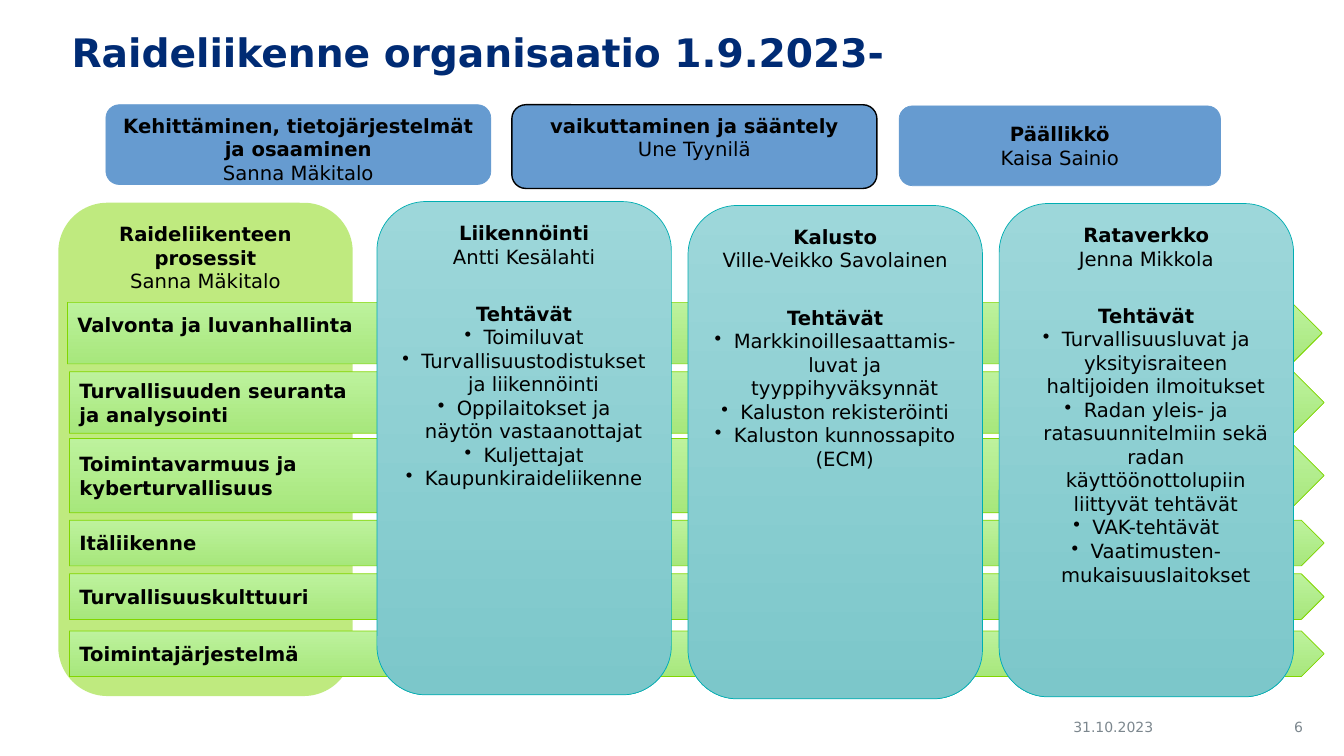
from lxml.etree import SubElement
from pptx import Presentation
from pptx.dml.color import RGBColor
from pptx.enum.shapes import MSO_SHAPE as Shape
from pptx.enum.text import MSO_ANCHOR as Anchor, PP_ALIGN as Align
from pptx.oxml.ns import qn
from pptx.util import Cm, Pt

BLACK = RGBColor(0x00, 0x00, 0x00)
NAVY = RGBColor(0x00, 0x2B, 0x74)
GREY = RGBColor(0x7C, 0x87, 0x8E)
BLUE = RGBColor(0x66, 0x9B, 0xD0)
GREEN = RGBColor(0x81, 0xD6, 0x00)
LIME_TOP = RGBColor(0xBD, 0xF2, 0x9D)
LIME_BOTTOM = RGBColor(0xA7, 0xE7, 0x7C)
TEAL = RGBColor(0x00, 0xAE, 0xB2)
TEAL_TOP = RGBColor(0x9D, 0xD7, 0xDA)
TEAL_BOTTOM = RGBColor(0x7C, 0xC7, 0xCA)

# left, top, width, height, heading, person, anchor, outline colour, outline width
LEADERS = [
    (2.67, 2.64, 9.7, 2.01, "Kehittäminen, tietojärjestelmät ja osaaminen",
     "Sanna Mäkitalo", Anchor.TOP, BLUE, 0.5),
    (12.9, 2.64, 9.2, 2.11, "vaikuttaminen ja sääntely",
     "Une Tyynilä", Anchor.TOP, BLACK, 1),
    (22.66, 2.67, 8.1, 2.01, "Päällikkö",
     "Kaisa Sainio", Anchor.MIDDLE, BLUE, 0.5),
]
# left, top, height, label
PROCESSES = [
    (1.7, 7.62, 1.55, "Valvonta ja luvanhallinta"),
    (1.75, 9.37, 1.55, "Turvallisuuden seuranta\vja analysointi"),
    (1.75, 11.05, 1.87, "Toimintavarmuus ja\vkyberturvallisuus"),
    (1.75, 13.11, 1.15, "Itäliikenne"),
    (1.75, 14.46, 1.15, "Turvallisuuskulttuuri"),
    (1.75, 15.9, 1.15, "Toimintajärjestelmä"),
]
# top, unit, person, tasks
UNITS = [
    (5.08, "Liikennöinti", "Antti Kesälahti", [
        "Toimiluvat",
        "Turvallisuustodistukset ja liikennöinti",
        "Oppilaitokset ja näytön vastaanottajat",
        "Kuljettajat",
        "Kaupunkiraideliikenne"]),
    (5.18, "Kalusto", "Ville-Veikko Savolainen", [
        "Markkinoillesaattamis-luvat ja tyyppihyväksynnät",
        "Kaluston rekisteröinti",
        "Kaluston kunnossapito (ECM)"]),
    (5.13, "Rataverkko", "Jenna Mikkola", [
        "Turvallisuusluvat ja yksityisraiteen haltijoiden ilmoitukset",
        "Radan yleis- ja ratasuunnitelmiin sekä radan "
        "käyttöönottolupiin liittyvät tehtävät",
        "VAK-tehtävät",
        "Vaatimusten-mukaisuuslaitokset"]),
]
UNIT_LEFT, UNIT_STEP = 9.5, 7.84
COLUMN_WIDTH, COLUMN_HEIGHT = 7.42, 12.43
ARROW_WIDTH = 31.62


def write(frame, text, *, size=14, color=BLACK, bold=False, align=Align.CENTER,
          before=0, bullet=False):
    """Add one paragraph, reusing the frame's first one while it is empty."""
    para = frame.paragraphs[0]
    if para.text:
        para = frame.add_paragraph()
    para.alignment = align
    if before:
        para.space_before = Pt(before)
    if bullet:
        props = para._p.get_or_add_pPr()
        props.set("marL", str(Cm(0.48)))
        props.set("indent", str(-Cm(0.48)))
        SubElement(props, qn("a:buChar")).set("char", "•")
    for number, line in enumerate(text.split("\v")):
        if number:
            para.add_line_break()
        span = para.add_run()
        span.text = line
        span.font.name = "DejaVu Sans"
        span.font.size = Pt(size)
        span.font.bold = bold
        span.font.color.rgb = color
    return para


class OrganisationSlide:
    def __init__(self, deck):
        self.slide = deck.slides.add_slide(deck.slide_layouts[5])

    def title(self, text):
        box = self.slide.shapes.title
        box.left, box.top, box.width, box.height = Cm(1.55), Cm(0.71), Cm(29.85), Cm(1.55)
        box.text_frame.vertical_anchor = Anchor.TOP
        para = write(box.text_frame, text, size=28, color=NAVY, bold=True, align=Align.LEFT)
        para.line_spacing = 0.9

    def footer(self, left, width, text, align):
        box = self.slide.shapes.add_textbox(Cm(left), Cm(17.96), Cm(width), Cm(0.71))
        box.text_frame.word_wrap = True
        box.text_frame.vertical_anchor = Anchor.MIDDLE
        write(box.text_frame, text, size=10, color=GREY, align=align)

    def shape(self, kind, left, top, width, height, *, colors, line=None,
              line_width=0.5, anchor=Anchor.TOP):
        """Add a shape filled with one colour, or with a gradient from top to bottom."""
        box = self.slide.shapes.add_shape(kind, Cm(left), Cm(top), Cm(width), Cm(height))
        box.shadow.inherit = False
        if len(colors) == 1:
            box.fill.solid()
            box.fill.fore_color.rgb = colors[0]
        else:
            box.fill.gradient()
            box.fill.gradient_angle = 270
            for stop, color, position in zip(box.fill.gradient_stops, colors, (0, 1)):
                stop.color.rgb = color
                stop.position = position
        if line is None:
            box.line.fill.background()
        else:
            box.line.color.rgb = line
            box.line.width = Pt(line_width)
        box.text_frame.word_wrap = True
        box.text_frame.vertical_anchor = anchor
        return box

    def process_column(self, heading, person):
        box = self.shape(Shape.ROUNDED_RECTANGLE, 1.47, 5.11, COLUMN_WIDTH, COLUMN_HEIGHT,
                         colors=[GREEN])
        color = box._element.spPr.find(qn("a:solidFill"))[0]
        SubElement(color, qn("a:alpha")).set("val", "50000")
        write(box.text_frame, heading, bold=True)
        write(box.text_frame, person)

    def process_arrow(self, left, top, height, label):
        box = self.shape(Shape.PENTAGON, left, top, ARROW_WIDTH, height,
                         colors=[LIME_TOP, LIME_BOTTOM], line=GREEN, anchor=Anchor.MIDDLE)
        write(box.text_frame, label, bold=True, align=Align.LEFT)
        return box

    def leader(self, left, top, width, height, heading, person, anchor, line, line_width):
        box = self.shape(Shape.ROUNDED_RECTANGLE, left, top, width, height, colors=[BLUE],
                         line=line, line_width=line_width, anchor=anchor)
        write(box.text_frame, heading, bold=True)
        write(box.text_frame, person)

    def unit(self, left, top, heading, person, tasks):
        box = self.shape(Shape.ROUNDED_RECTANGLE, left, top, COLUMN_WIDTH, COLUMN_HEIGHT,
                         colors=[TEAL_TOP, TEAL_BOTTOM], line=TEAL)
        write(box.text_frame, heading, bold=True)
        write(box.text_frame, person)
        write(box.text_frame, "Tehtävät", bold=True, before=24)
        for task in tasks:
            write(box.text_frame, task, bullet=True)


def main():
    deck = Presentation()
    deck.slide_width, deck.slide_height = Cm(33.87), Cm(19.05)
    page = OrganisationSlide(deck)
    page.title("Raideliikenne organisaatio 1.9.2023-")
    page.process_column("Raideliikenteen prosessit", "Sanna Mäkitalo")
    arrows = [page.process_arrow(*process) for process in PROCESSES]
    arrows[0].text_frame.margin_bottom = Cm(0.55)
    for leader in LEADERS:
        page.leader(*leader)
    for column, unit in enumerate(UNITS):
        page.unit(UNIT_LEFT + column * UNIT_STEP, *unit)
    page.footer(25.45, 5.21, "31.10.2023", Align.CENTER)
    page.footer(31.39, 1.7, "6", Align.RIGHT)
    deck.save("out.pptx")


if __name__ == "__main__":
    main()
